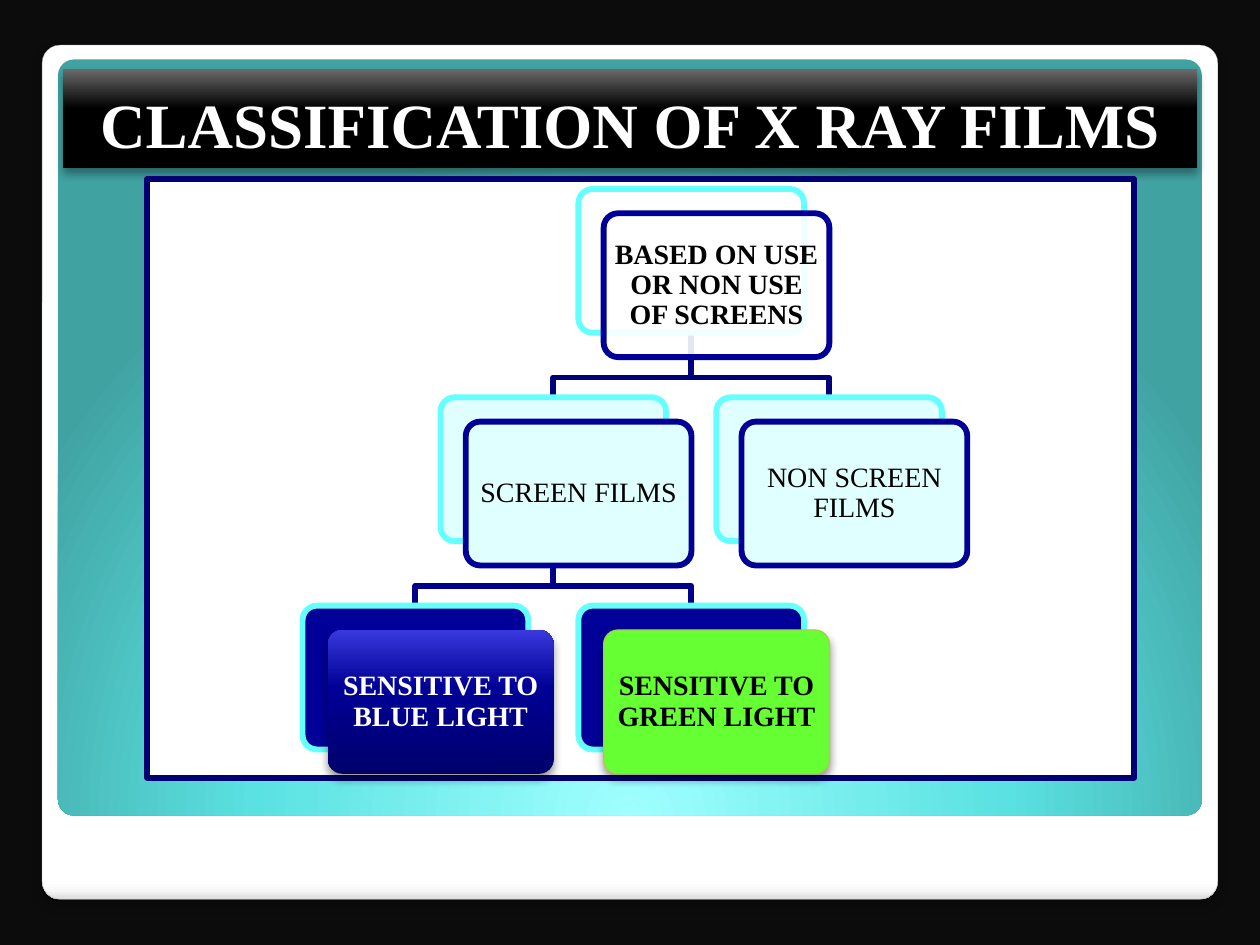
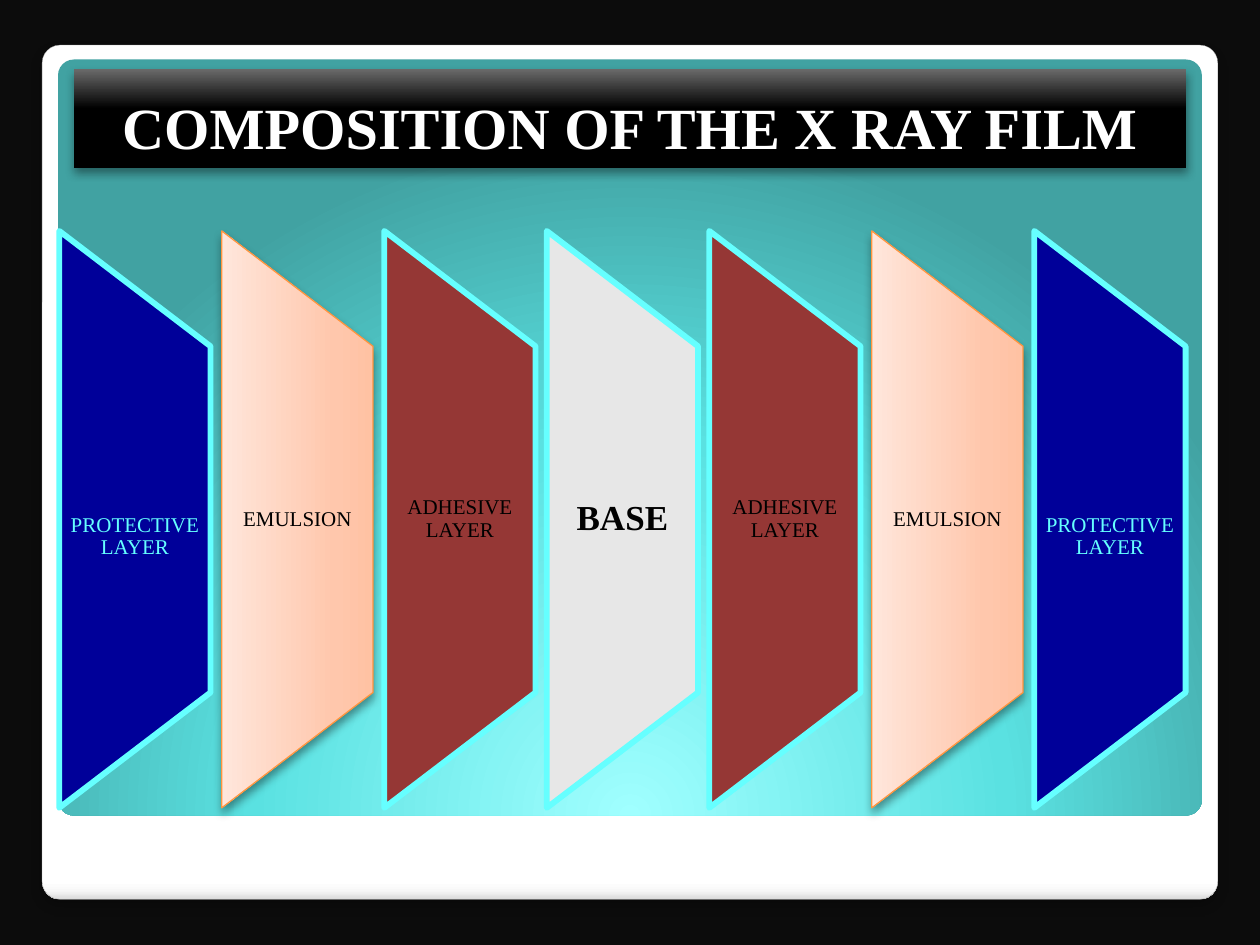
import pptx
import pptx.dml.color
import pptx.enum.shapes
import pptx.enum.text
import pptx.oxml
import pptx.oxml.ns
import pptx.util

Cm = pptx.util.Cm
Pt = pptx.util.Pt
RGB = pptx.dml.color.RGBColor
Kind = pptx.enum.shapes.MSO_SHAPE
Align = pptx.enum.text.PP_ALIGN
Anchor = pptx.enum.text.MSO_ANCHOR
qn = pptx.oxml.ns.qn

BACK = RGB(0x0C, 0x0C, 0x0C)
BLACK = RGB(0, 0, 0)
WHITE = RGB(0xFF, 0xFF, 0xFF)
PALE = RGB(0xE0, 0xFF, 0xFF)
CYAN = RGB(0x66, 0xFF, 0xFF)
NAVY = RGB(0, 0, 0x99)
FRAME = RGB(0, 0, 0x71)
UPPER = RGB(0, 0, 0x7B)
LOWER = RGB(0, 0, 0x8B)
GREEN = RGB(0x66, 0xFF, 0x33)
LIME = RGB(0xA4, 0xD3, 0x40)
RUST = RGB(0x95, 0x37, 0x35)
GREY = RGB(0xE7, 0xE7, 0xE7)
ORANGE = RGB(0xFF, 0x95, 0x3E)
ASH = RGB(0xA4, 0xA4, 0xA4)

DOWN = '<a:lin ang="5400000" scaled="0"/>'
UP = '<a:lin ang="16200000" scaled="0"/>'
GLOW = '<a:path path="circle"><a:fillToRect l="50000" t="175000" r="50000" b="-75000"/></a:path>'
SHEET = ([(0, WHITE), (98, WHITE), (99, RGB(0xF7, 0xF7, 0xF7)), (100, RGB(0xDA, 0xDA, 0xDA))], DOWN)
POOL = ([(0, RGB(0xA0, 0xFF, 0xFF)), (55, RGB(0x5A, 0xE1, 0xE1)), (100, RGB(0x41, 0xA2, 0xA2))], GLOW)
GLOSS = ([(0, BLACK), (60, BLACK), (100, RGB(0x69, 0x69, 0x69))], UP)
BLUE = ([(0, RGB(0, 0, 0x6C)), (60, RGB(0, 0, 0x96)), (100, RGB(0x38, 0x38, 0xDC))], UP)
PEACH = ([(0, RGB(0xFF, 0xC2, 0xA3)), (25, RGB(0xFF, 0xC7, 0xAC)), (100, RGB(0xFF, 0xE6, 0xDB))], UP)

FONT = "Times New Roman"
WIDE, HIGH = 25.4, 19.05
THICK, THIN = 3.35, 0.75
SHADE = (40, 5.2, 3)


def make(xml):
    return pptx.oxml.parse_xml(xml.replace(">", f' {pptx.oxml.ns.nsdecls("a")}>', 1))


def paint(shape, fill):
    if not isinstance(fill, tuple) or isinstance(fill, RGB):
        shape.fill.solid()
        shape.fill.fore_color.rgb = fill
        return
    stops, way = fill
    marks = "".join(f'<a:gs pos="{at * 1000}"><a:srgbClr val="{tone}"/></a:gs>' for at, tone in stops)
    shape.fill.background()
    props = shape.element.spPr
    props.replace(props.find(qn("a:noFill")),
                  make(f'<a:gradFill rotWithShape="1"><a:gsLst>{marks}</a:gsLst>{way}</a:gradFill>'))


def edge(shape, line):
    if line:
        shape.line.color.rgb, shape.line.width = line[0], Pt(line[1])
    else:
        shape.line.fill.background()


def cast(shape, shade):
    shape.shadow.inherit = False
    if shade:
        alpha, blur, dist = shade
        shape.element.spPr.find(qn("a:effectLst")).append(make(
            f'<a:outerShdw blurRad="{Pt(blur)}" dist="{Pt(dist)}" dir="5400000" algn="ctr" rotWithShape="0">'
            f'<a:srgbClr val="000000"><a:alpha val="{alpha * 1000}"/></a:srgbClr></a:outerShdw>'))


def block(slide, kind, box, fill, line=None, shade=None):
    shape = slide.shapes.add_shape(kind, *map(Cm, box))
    paint(shape, fill)
    edge(shape, line)
    cast(shape, shade)
    return shape


def round_box(slide, box, fill, curve, line=None, shade=None):
    shape = block(slide, Kind.ROUNDED_RECTANGLE, box, fill, line, shade)
    shape.adjustments[0] = curve
    return shape


def write(shape, text, size, tone, bold=False, space=0.9, side=0.13, top=0.13, foot=0.13, anchor=Anchor.MIDDLE):
    frame = shape.text_frame
    frame.word_wrap = True
    frame.vertical_anchor = anchor
    frame.margin_left = frame.margin_right = Cm(side)
    frame.margin_top, frame.margin_bottom = Cm(top), Cm(foot)
    para = frame.paragraphs[0]
    para.text = text
    para.alignment = Align.CENTER
    para.line_spacing = space
    font = para.font
    font.name, font.size, font.bold = FONT, Pt(size), bold
    font.color.rgb = tone


def base(deck):
    slide = deck.slides.add_slide(deck.slide_layouts[6])
    slide.background.fill.solid()
    slide.background.fill.fore_color.rgb = BACK
    round_box(slide, (0.85, 0.91, 23.7, 17.22), SHEET, 0.021, (ASH, 0.16), (25, 6, 4))
    round_box(slide, (1.17, 1.2, 23.06, 15.24), POOL, 0.021)
    return slide


def title(slide, text, size, width):
    band = block(slide, Kind.RECTANGLE, ((WIDE - width) / 2, 1.4, width, 1.98), GLOSS, shade=SHADE)
    write(band, text, size, WHITE, True, 1, anchor=Anchor.BOTTOM)


CARD_W, CARD_H = 4.55, 2.9


def spot(col, row):
    return 11.66 + 2.78 * col, 3.81 + 4.2 * row


def elbow(slide, start, end, tone):
    (x, y), (to_x, to_y) = spot(*start), spot(*end)
    x, to_x, y = x + CARD_W / 2, to_x + CARD_W / 2, y + CARD_H
    points = [(x, y), (x, y + 0.9), (to_x, y + 0.9), (to_x, to_y)]
    points = [(Cm(a), Cm(b)) for a, b in points]
    path = slide.shapes.build_freeform(*points[0])
    path.add_line_segments(points[1:], close=False)
    shape = path.convert_to_shape()
    shape.fill.background()
    edge(shape, (tone, THICK))
    cast(shape, None)


def card(slide, place, text, rear, fill, tone, bold, line, shade):
    x, y = spot(*place)
    round_box(slide, (x, y, CARD_W, CARD_H), rear, 0.1, (CYAN, THICK))
    front = round_box(slide, (x + 0.51, y + 0.49, CARD_W, CARD_H), fill, 0.1, line, shade)
    write(front, text, 16, tone, bold)
    return front


def tree(slide):
    block(slide, Kind.RECTANGLE, (2.97, 3.61, 19.89, 12.07), WHITE, (FRAME, THICK))
    root, screen, other, blue, green = (0, 0), (-1, 1), (1, 1), (-2, 2), (0, 2)
    for start, end, tone in [(root, other, UPPER), (screen, green, LOWER),
                             (screen, blue, LOWER), (root, screen, UPPER)]:
        elbow(slide, start, end, tone)
    rim = (NAVY, THICK)
    head = card(slide, root, "BASED ON USE OR NON USE OF SCREENS", WHITE, WHITE, BLACK, True, rim, None)
    head.element.spPr.find(qn("a:solidFill"))[0].append(make('<a:alpha val="90000"></a:alpha>'))
    card(slide, screen, "SCREEN FILMS", PALE, PALE, BLACK, False, rim, None)
    card(slide, blue, "SENSITIVE TO BLUE LIGHT", NAVY, BLUE, WHITE, True, None, SHADE)
    card(slide, green, "SENSITIVE TO GREEN LIGHT", NAVY, GREEN, BLACK, True, (LIME, THIN), SHADE)
    card(slide, other, "NON SCREEN FILMS", PALE, PALE, BLACK, False, rim, None)


def layer(slide, index, text, fill, line, shade=None, size=12, tone=BLACK, bold=False, top=0):
    long, thick = 11.63, 3.05
    mid_x, mid_y = 2.72 + 3.276 * index, 10.47
    slab = block(slide, Kind.FLOWCHART_MANUAL_OPERATION,
                 (mid_x - long / 2, mid_y - thick / 2, long, thick), fill, line, shade)
    slab.rotation = 270
    label = slide.shapes.add_textbox(Cm(mid_x - thick / 2), Cm(mid_y - 3.5), Cm(thick), Cm(7))
    write(label, text, size, tone, bold, side=0.13, top=top, foot=0)


def film(slide):
    rim = (CYAN, THICK)
    guard = dict(text="PROTECTIVE LAYER", fill=NAVY, line=rim, tone=CYAN, top=0.7)
    coat = dict(text="EMULSION", fill=PEACH, line=(ORANGE, THIN), shade=SHADE)
    glue = dict(text="ADHESIVE LAYER", fill=RUST, line=rim)
    core = dict(text="BASE", fill=GREY, line=rim, size=20, bold=True)
    for index, look in enumerate([guard, coat, glue, core, glue, coat, guard]):
        layer(slide, index, **look)


def main():
    deck = pptx.Presentation()
    deck.slide_width, deck.slide_height = Cm(WIDE), Cm(HIGH)
    slide = base(deck)
    title(slide, "CLASSIFICATION OF X RAY FILMS", 36, 22.86)
    tree(slide)
    slide = base(deck)
    title(slide, "COMPOSITION OF THE X RAY FILM", 33.3, 22.43)
    film(slide)
    deck.save("out.pptx")


if __name__ == "__main__":
    main()
